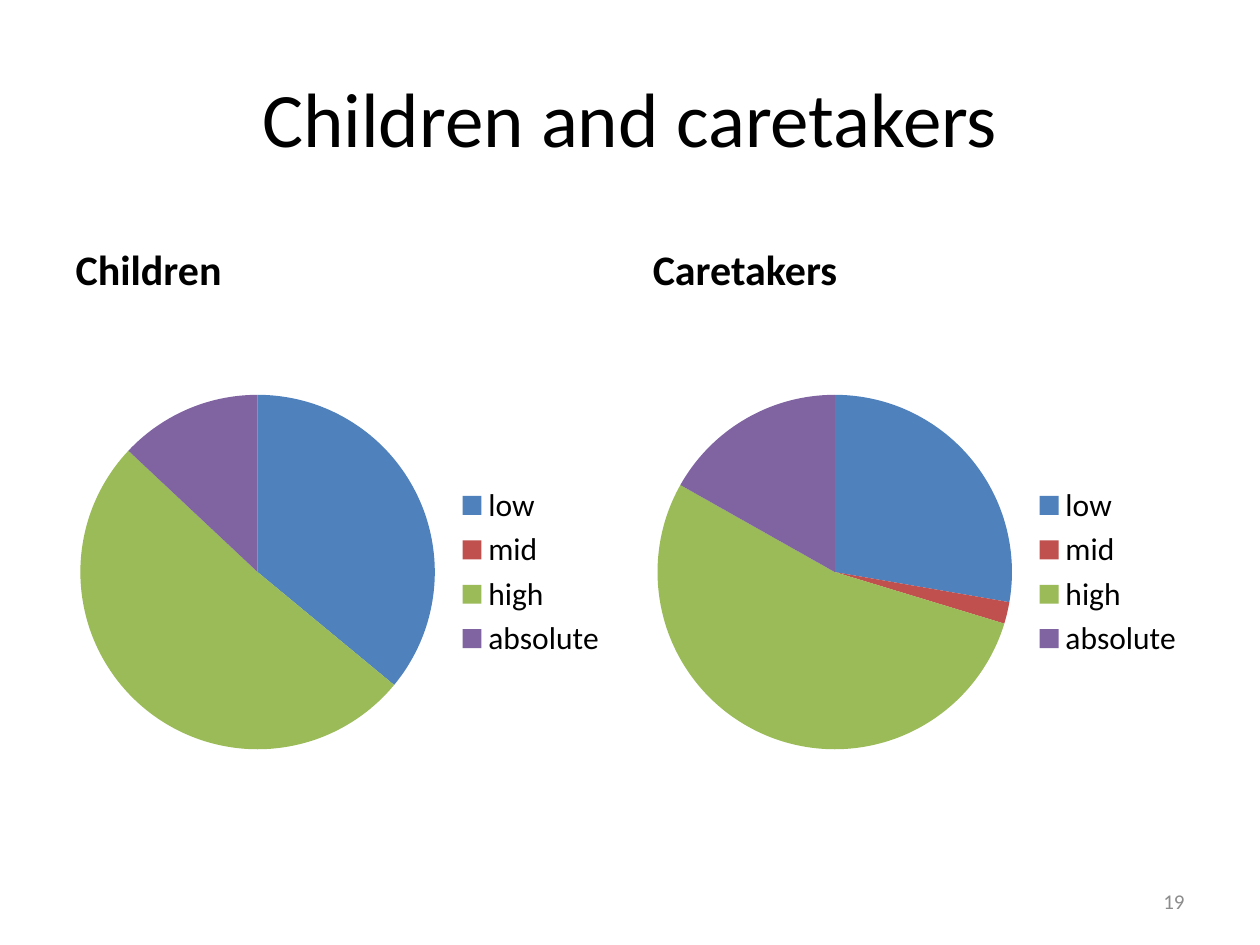
"""Build a slide that compares children and caretakers in two pie charts."""
from dataclasses import dataclass

from pptx import Presentation
from pptx.chart.data import CategoryChartData
from pptx.dml.color import RGBColor
from pptx.enum import chart as ch, text as tx
from pptx.util import Pt

FONT = "Calibri"
HEX = {"ink": "000000", "gray": "8C8C8C", "low": "4F81BD", "mid": "C0504D",
       "high": "9BBB59", "absolute": "8064A2"}
CATS = ["low", "mid", "high", "absolute"]
WIDE = 318.2


@dataclass
class Panel:
    """One heading with its pie chart."""
    head: str
    left: float
    slot: int
    vals: tuple[int, ...]


PANELS = [Panel("Children", 36, 1, (36, 0, 51, 13)),
          Panel("Caretakers", 365.8, 3, (28, 2, 54, 17))]


def tint(name: str) -> RGBColor:
    """Return a named colour."""
    return RGBColor.from_string(HEX[name])


def place(shape, left: float, top: float, wide: float, high: float) -> None:
    """Move and size a shape in points."""
    shape.left, shape.top = Pt(left), Pt(top)
    shape.width, shape.height = Pt(wide), Pt(high)


def style(font, size: float, name: str = "ink", bold: bool = False) -> None:
    """Set the look of a font."""
    font.name, font.size, font.bold = FONT, Pt(size), bold
    font.color.rgb = tint(name)


def write(shape, words: str, size: float, align, anchor,
          name: str = "ink", bold: bool = False) -> None:
    """Fill a shape with one line of text."""
    frame = shape.text_frame
    frame.text = words
    frame.word_wrap = True
    frame.vertical_anchor = anchor
    line = frame.paragraphs[0]
    line.alignment = align
    style(line.runs[0].font, size, name, bold)


def draw(slide, panel: Panel) -> None:
    """Draw the heading and the pie of a panel."""
    head = slide.placeholders[panel.slot]
    place(head, panel.left, 121, WIDE, 50.4)
    write(head, panel.head, 24, tx.PP_ALIGN.LEFT, tx.MSO_ANCHOR.BOTTOM, bold=True)
    spare = slide.placeholders[panel.slot + 1].element
    spare.getparent().remove(spare)

    data = CategoryChartData()
    data.categories = CATS
    data.add_series("Series 1", panel.vals)
    pie = slide.shapes.add_chart(ch.XL_CHART_TYPE.PIE, Pt(panel.left), Pt(171.4),
                                 Pt(WIDE), Pt(311), data).chart
    pie.has_title = False
    style(pie.font, 18)
    pie.has_legend = True
    pie.legend.position = ch.XL_LEGEND_POSITION.RIGHT
    pie.legend.include_in_layout = False
    pie.plots[0].vary_by_categories = True
    for i, cat in enumerate(CATS):
        fill = pie.plots[0].series[0].points[i].format.fill
        fill.solid()
        fill.fore_color.rgb = tint(cat)


def main() -> None:
    """Build and save the slide."""
    deck = Presentation()
    deck.slide_width, deck.slide_height = Pt(720), Pt(540)
    slide = deck.slides.add_slide(deck.slide_layouts[4])
    title = slide.shapes.title
    place(title, 36, 21.6, 648, 90)
    write(title, "Children and caretakers", 44, tx.PP_ALIGN.CENTER,
          tx.MSO_ANCHOR.MIDDLE)
    for panel in PANELS:
        draw(slide, panel)
    page = slide.shapes.add_textbox(Pt(516), Pt(500.5), Pt(168), Pt(28.8))
    write(page, "19", 12, tx.PP_ALIGN.RIGHT, tx.MSO_ANCHOR.MIDDLE, "gray")
    deck.save("out.pptx")


if __name__ == "__main__":
    main()
